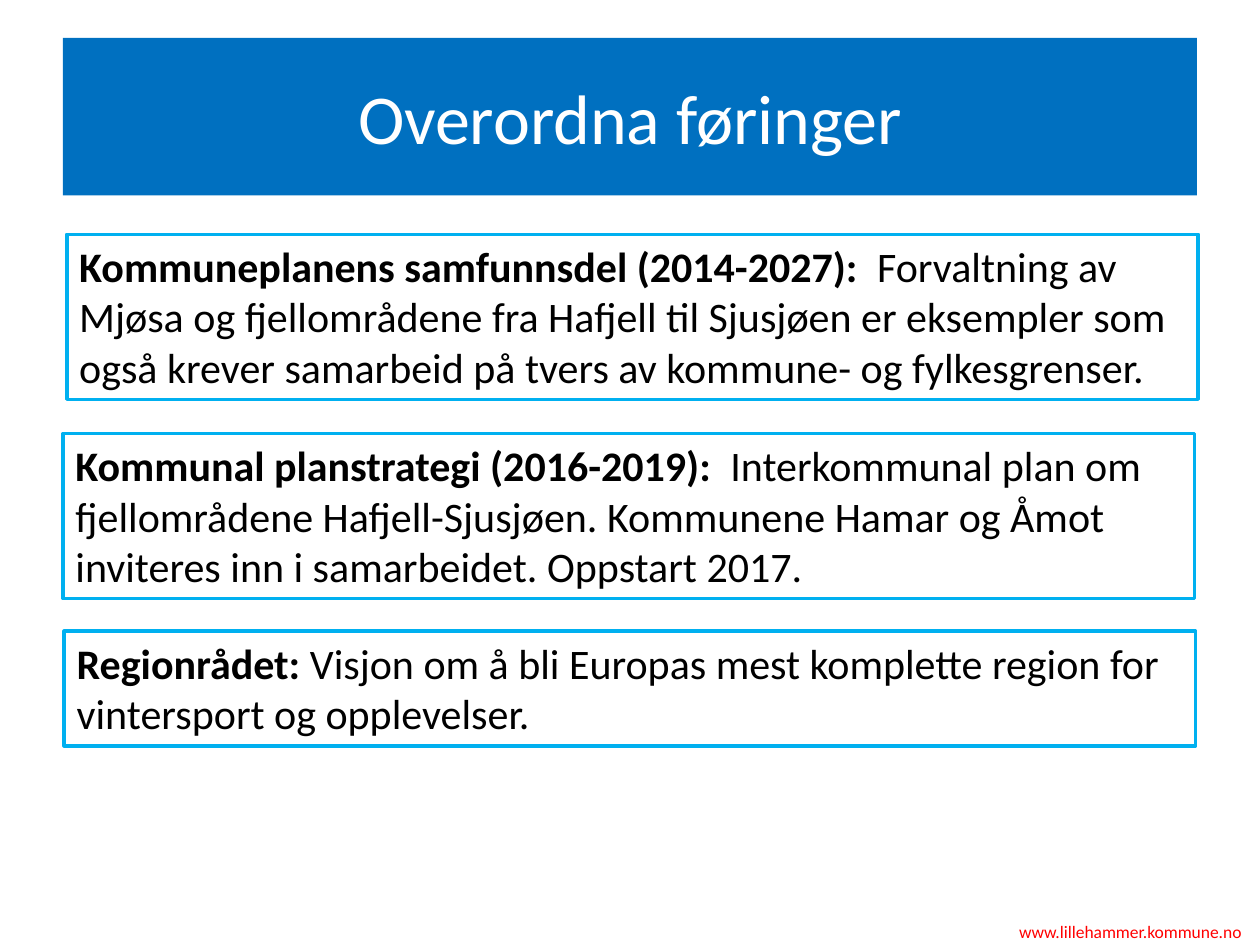
from pptx import Presentation
from pptx.dml.color import RGBColor
from pptx.enum.shapes import MSO_SHAPE
from pptx.enum.text import MSO_ANCHOR, PP_ALIGN
from pptx.util import Inches, Pt

RECTANGLE = MSO_SHAPE.RECTANGLE
TOP, MIDDLE = MSO_ANCHOR.TOP, MSO_ANCHOR.MIDDLE
LEFT, CENTER = PP_ALIGN.LEFT, PP_ALIGN.CENTER

WHITE = RGBColor(0xFF, 0xFF, 0xFF)
BLACK = RGBColor(0x00, 0x00, 0x00)
RED = RGBColor(0xFF, 0x00, 0x00)
BLUE = RGBColor(0x00, 0x70, 0xC0)
CYAN = RGBColor(0x00, 0xB0, 0xF0)

GUIDELINES = [
    (0.53, 1.86, 1.31, "Kommuneplanens samfunnsdel (2014-2027):  ",
     "Forvaltning av Mjøsa og fjellområdene fra Hafjell til Sjusjøen er "
     "eksempler som også krever samarbeid på tvers av kommune- og fylkesgrenser."),
    (0.5, 3.44, 1.31, "Kommunal planstrategi (2016-2019):  ",
     "Interkommunal plan om fjellområdene Hafjell-Sjusjøen. Kommunene Hamar "
     "og Åmot inviteres inn i samarbeidet. Oppstart 2017."),
    (0.51, 5.01, 0.91, "Regionrådet: ",
     "Visjon om å bli Europas mest komplette region for vintersport og opplevelser."),
]


class SlideBuilder:
    font_name = "Calibri"

    def __init__(self, slide):
        self.slide = slide

    def add_text(self, box, spans, size, color, align=LEFT, anchor=TOP, wrap=True):
        frame = box.text_frame
        frame.word_wrap = wrap
        frame.vertical_anchor = anchor
        para = frame.paragraphs[0]
        para.alignment = align
        for text, bold in spans:
            span = para.add_run()
            span.text = text
            formats = {"name": self.font_name, "size": Pt(size), "bold": bold}
            for key, value in formats.items():
                setattr(span.font, key, value)
            span.font.color.rgb = color

    def rectangle(self, left, top, width, height):
        box = self.slide.shapes.add_shape(
            RECTANGLE, Inches(left), Inches(top), Inches(width), Inches(height))
        box.shadow.inherit = False
        return box

    def banner(self, left, top, width, height, text):
        box = self.rectangle(left, top, width, height)
        box.fill.solid()
        box.fill.fore_color.rgb = BLUE
        box.line.fill.background()
        self.add_text(box, [(text, False)], 40, WHITE, CENTER, MIDDLE)

    def guideline(self, left, top, width, height, heading, body):
        box = self.rectangle(left, top, width, height)
        box.fill.background()
        box.line.color.rgb = CYAN
        box.line.width = Pt(2)
        self.add_text(box, [(heading, True), (body, False)], 24, BLACK)

    def label(self, left, top, width, height, text):
        box = self.slide.shapes.add_textbox(
            Inches(left), Inches(top), Inches(width), Inches(height))
        self.add_text(box, [(text, False)], 10, RED, wrap=False)


def main():
    deck = Presentation()
    deck.slide_width, deck.slide_height = Inches(10), Inches(7.5)
    page = SlideBuilder(deck.slides.add_slide(deck.slide_layouts[6]))
    page.label(7.99, 7.26, 2.07, 0.27, "www.lillehammer.kommune.no")
    page.banner(0.5, 0.3, 9, 1.25, "Overordna føringer")
    for left, top, height, heading, body in GUIDELINES:
        page.guideline(left, top, 8.98, height, heading, body)
    deck.save("out.pptx")


if __name__ == "__main__":
    main()
